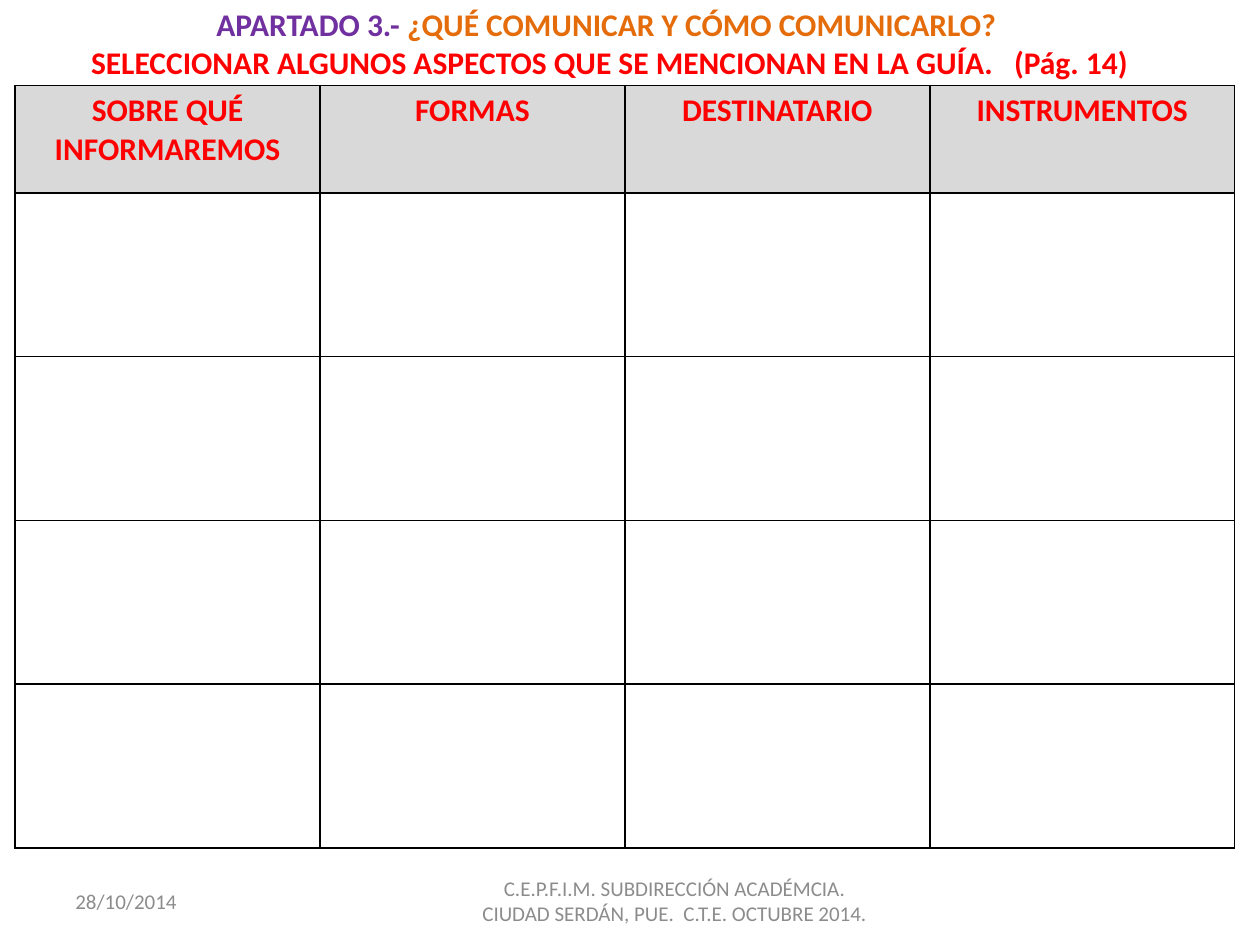
from pptx import Presentation
from pptx.dml.color import RGBColor
from pptx.enum import text
from pptx.oxml import parse_xml
from pptx.oxml.ns import nsdecls
from pptx.util import Inches, Pt

FONT = "Calibri"
COLORS = {"purple": "7030A0", "orange": "E46C0A", "red": "FF0000", "gray": "8C8C8C",
          "header": "D9D9D9", "white": "FFFFFF", "border": "000000"}
TITLE_LINES = [
    [("APARTADO 3.- ", "purple"), ("¿QUÉ COMUNICAR Y CÓMO COMUNICARLO? ", "orange")],
    [("SELECCIONAR ALGUNOS ASPECTOS QUE SE MENCIONAN EN LA GUÍA.   (Pág. 14)", "red")],
]
HEADERS = ["SOBRE QUÉ INFORMAREMOS", "FORMAS", "DESTINATARIO", "INSTRUMENTOS"]
EMPTY_ROWS = 4
HEADER_HEIGHT, ROW_HEIGHT = 0.85, 1.3
TABLE_LEFT, TABLE_TOP, COLUMN_WIDTH = 0.12, 0.68, 2.42
FOOTERS = [
    (0.5, 2.33, text.PP_ALIGN.LEFT, ["28/10/2014"]),
    (3.42, 3.87, text.PP_ALIGN.CENTER,
     ["C.E.P.F.I.M. SUBDIRECCIÓN ACADÉMCIA.", "CIUDAD SERDÁN, PUE.  C.T.E. OCTUBRE 2014."]),
]


def color(name):
    return RGBColor.from_string(COLORS[name])


def style(para, size, name=None, bold=False, align=text.PP_ALIGN.CENTER):
    para.alignment = align
    para.font.name, para.font.size, para.font.bold = FONT, Pt(size), bold
    if name:
        para.font.color.rgb = color(name)


def add_title(page):
    box = page.shapes.title
    box.left, box.top, box.width, box.height = map(Inches, (0.59, 0, 8.5, 0.68))
    frame = box.text_frame
    frame.auto_size = text.MSO_AUTO_SIZE.NONE
    frame.vertical_anchor = text.MSO_ANCHOR.MIDDLE
    para = frame.paragraphs[0]
    style(para, 18, bold=True)
    for number, line in enumerate(TITLE_LINES):
        if number:
            para.add_line_break()
        for words, name in line:
            span = para.add_run()
            span.text = words
            span.font.color.rgb = color(name)


def add_borders(cell):
    properties = cell._tc.get_or_add_tcPr()
    for side in "LRTB":
        properties.append(parse_xml(
            f'<a:ln{side} {nsdecls("a")} w="{Pt(1)}"><a:solidFill>'
            f'<a:srgbClr val="{COLORS["border"]}"/></a:solidFill></a:ln{side}>'))


def add_grid(page):
    heights = [HEADER_HEIGHT] + [ROW_HEIGHT] * EMPTY_ROWS
    table = page.shapes.add_table(
        len(heights), len(HEADERS), Inches(TABLE_LEFT), Inches(TABLE_TOP),
        Inches(COLUMN_WIDTH * len(HEADERS)), Inches(sum(heights))).table
    for row, height in zip(table.rows, heights):
        row.height = Inches(height)
    for cell in table.iter_cells():
        add_borders(cell)
        cell.fill.solid()
        cell.fill.fore_color.rgb = color("white")
    for column, words in enumerate(HEADERS):
        cell = table.cell(0, column)
        cell.fill.fore_color.rgb = color("header")
        cell.text = words
        style(cell.text_frame.paragraphs[0], 18, "red", bold=True)


def add_footers(page):
    for left, width, align, lines in FOOTERS:
        box = page.shapes.add_textbox(Inches(left), Inches(6.95), Inches(width), Inches(0.4))
        frame = box.text_frame
        frame.word_wrap = True
        frame.vertical_anchor = text.MSO_ANCHOR.MIDDLE
        frame.text = "\n".join(lines)
        for para in frame.paragraphs:
            style(para, 12, "gray", align=align)


def main():
    """Build the planning slide with its title, empty grid and footers."""
    deck = Presentation()
    deck.slide_width, deck.slide_height = Inches(10), Inches(7.5)
    page = deck.slides.add_slide(deck.slide_layouts[5])
    add_title(page)
    add_grid(page)
    add_footers(page)
    deck.save("out.pptx")


if __name__ == "__main__":
    main()
